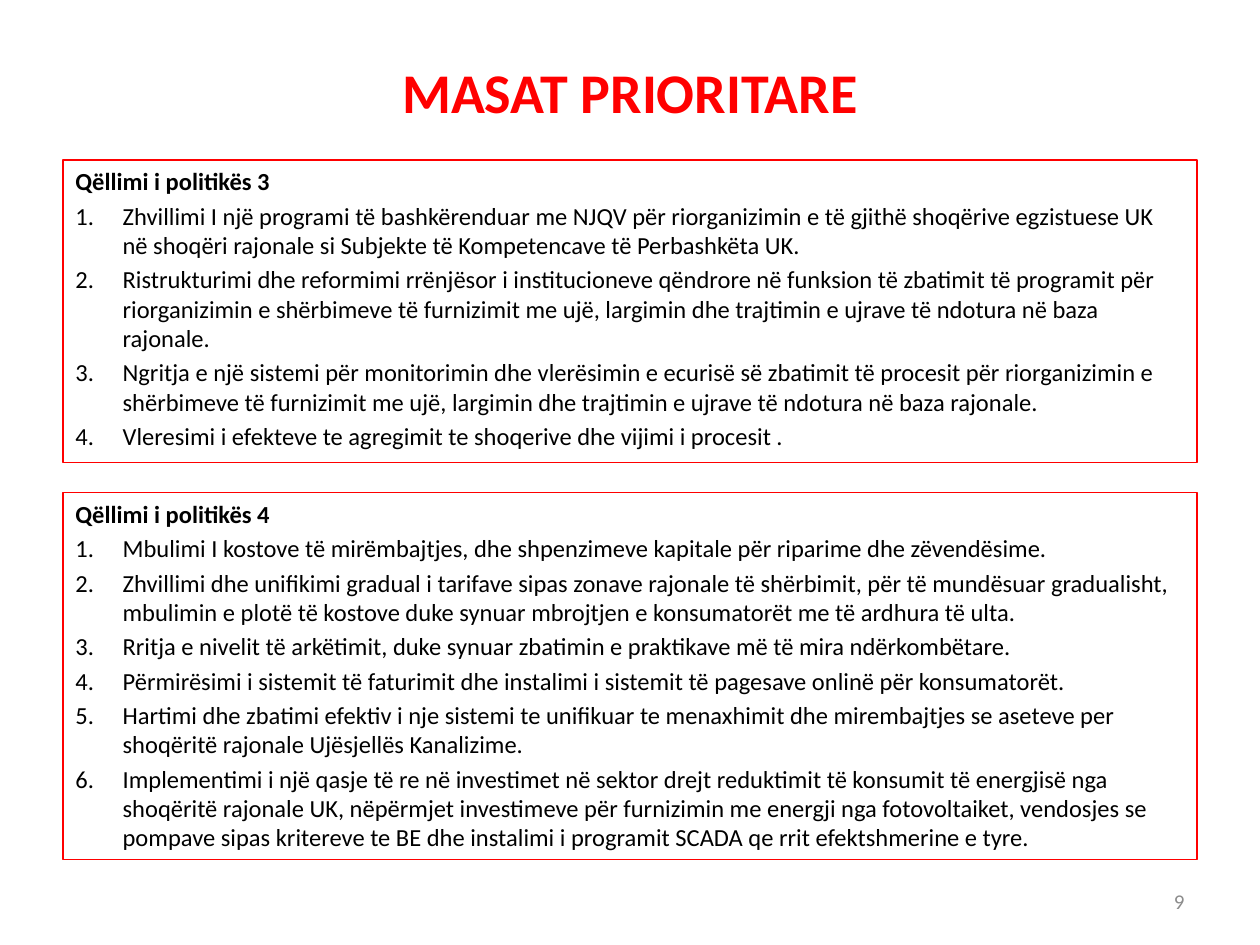
from lxml.etree import SubElement
from pptx import Presentation
from pptx.dml.color import RGBColor
from pptx.enum.shapes import MSO_SHAPE
from pptx.enum.text import MSO_ANCHOR, PP_ALIGN
from pptx.oxml.ns import qn
from pptx.util import Inches, Pt

COLORS = {"red": "FF0000", "text": "000000", "number": "8C8C8C"}
LEFT, WIDTH = 0.5, 9

GOAL_3 = [
    "Zhvillimi I një programi të bashkërenduar me NJQV për riorganizimin e të gjithë shoqërive egzistuese UK në shoqëri rajonale si Subjekte të Kompetencave të Perbashkëta UK.",
    "Ristrukturimi dhe reformimi rrënjësor i institucioneve qëndrore në funksion të zbatimit të programit për riorganizimin e shërbimeve të furnizimit me ujë, largimin dhe trajtimin e ujrave të ndotura në baza rajonale.",
    "Ngritja e një sistemi për monitorimin dhe vlerësimin e ecurisë së zbatimit të procesit për riorganizimin e shërbimeve të furnizimit me ujë, largimin dhe trajtimin e ujrave të ndotura në baza rajonale.",
    "Vleresimi i efekteve te agregimit te shoqerive dhe vijimi i procesit .",
]
GOAL_4 = [
    "Mbulimi I kostove të mirëmbajtjes, dhe shpenzimeve kapitale për riparime dhe zëvendësime.",
    "Zhvillimi dhe unifikimi gradual i tarifave sipas zonave rajonale të shërbimit, për të mundësuar gradualisht, mbulimin e plotë të kostove duke synuar mbrojtjen e konsumatorët me të ardhura të ulta.",
    "Rritja e nivelit të arkëtimit, duke synuar zbatimin e praktikave më të mira ndërkombëtare.",
    "Përmirësimi i sistemit të faturimit dhe instalimi i sistemit të pagesave onlinë për konsumatorët.",
    "Hartimi dhe zbatimi efektiv i nje sistemi te unifikuar te menaxhimit dhe mirembajtjes se aseteve per shoqëritë rajonale Ujësjellës Kanalizime.",
    "Implementimi i një qasje të re në investimet në sektor drejt reduktimit të konsumit të energjisë nga shoqëritë rajonale UK, nëpërmjet investimeve për furnizimin me energji nga fotovoltaiket, vendosjes se pompave sipas kritereve te BE dhe instalimi i programit SCADA qe rrit efektshmerine e tyre.",
]


class Deck:
    font = "Calibri"
    body_size = 14

    def __init__(self):
        self.prs = Presentation()
        self.prs.slide_width, self.prs.slide_height = Inches(10), Inches(7.5)
        self.s = self.prs.slides.add_slide(self.prs.slide_layouts[5])

    def run(self, p, text, size, color="text", bold=False):
        r = p.add_run()
        r.text = text
        r.font.name, r.font.size, r.font.bold = self.font, Pt(size), bold
        r.font.color.rgb = RGBColor.from_string(COLORS[color])

    def title(self, text, top, height):
        sp = self.s.shapes.title
        sp.left, sp.top = Inches(LEFT), Inches(top)
        sp.width, sp.height = Inches(WIDTH), Inches(height)
        tf = sp.text_frame
        tf.vertical_anchor = MSO_ANCHOR.MIDDLE
        p = tf.paragraphs[0]
        p.alignment = PP_ALIGN.CENTER
        self.run(p, text, 32, "red", True)

    def number(self, p):
        pPr = p._p.get_or_add_pPr()
        pPr.set("marL", str(Inches(0.375)))
        pPr.set("indent", str(-Inches(0.375)))
        SubElement(pPr, qn("a:buFont"), typeface=self.font)
        SubElement(pPr, qn("a:buAutoNum"), type="arabicPeriod")

    def goal_box(self, heading, items, top, height):
        sp = self.s.shapes.add_shape(MSO_SHAPE.RECTANGLE, Inches(LEFT), Inches(top),
                                     Inches(WIDTH), Inches(height))
        sp.shadow.inherit = False
        sp.fill.background()
        sp.line.color.rgb = RGBColor.from_string(COLORS["red"])
        sp.line.width = Pt(0.75)
        tf = sp.text_frame
        tf.word_wrap = True
        tf.vertical_anchor = MSO_ANCHOR.TOP
        for i, text in enumerate([heading, *items]):
            p = tf.add_paragraph() if i else tf.paragraphs[0]
            p.alignment = PP_ALIGN.LEFT
            p.space_before = Pt(0.2 * self.body_size)
            if i:
                self.number(p)
            self.run(p, text, self.body_size, bold=i == 0)

    def page_number(self, text):
        sp = self.s.shapes.add_textbox(Inches(7.17), Inches(6.95), Inches(2.33), Inches(0.4))
        tf = sp.text_frame
        tf.word_wrap = True
        tf.vertical_anchor = MSO_ANCHOR.MIDDLE
        p = tf.paragraphs[0]
        p.alignment = PP_ALIGN.RIGHT
        self.run(p, text, 12, "number")


def main():
    deck = Deck()
    # Heading
    deck.title("MASAT PRIORITARE", 0.3, 0.85)
    # Policy goals with numbered measures
    deck.goal_box("Qëllimi i politikës 3", GOAL_3, 1.27, 2.4)
    deck.goal_box("Qëllimi i politikës 4", GOAL_4, 3.91, 2.91)
    # Footer
    deck.page_number("9")
    deck.prs.save("out.pptx")


if __name__ == "__main__":
    main()
